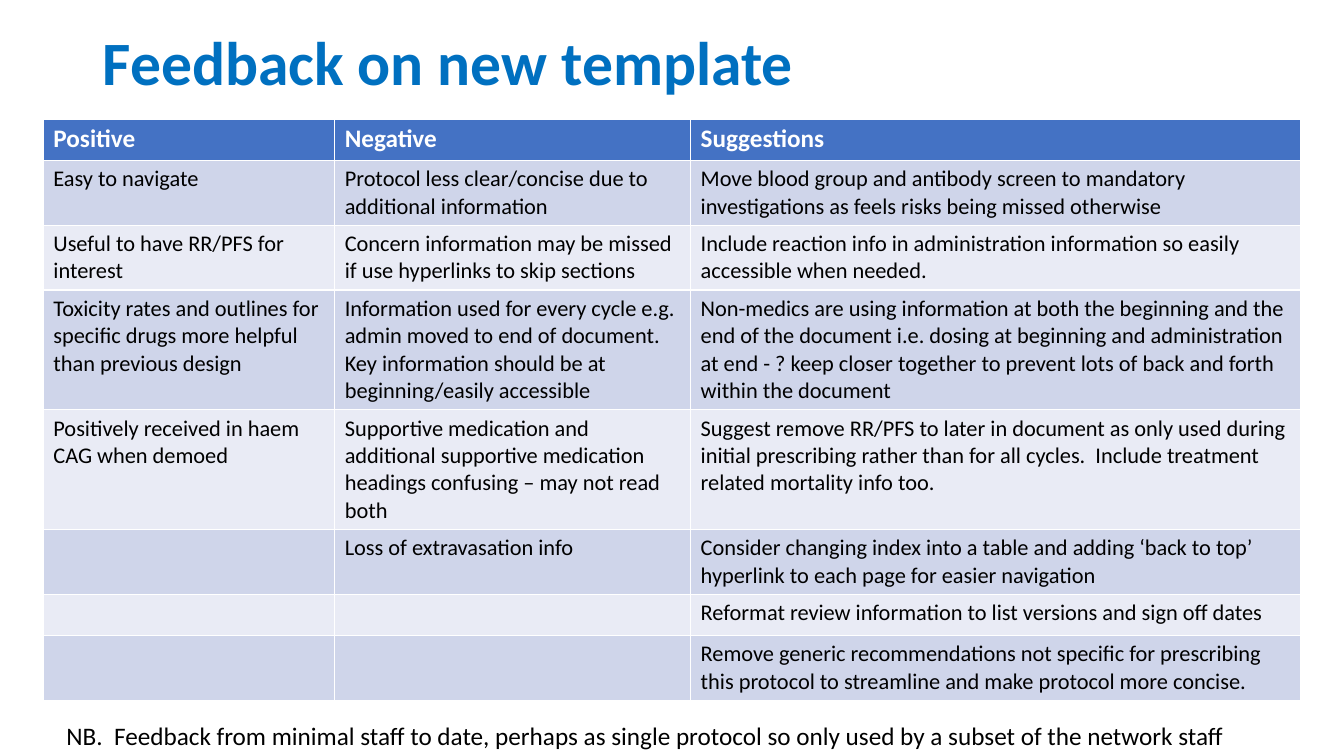
from pptx import Presentation
from pptx.dml.color import RGBColor as RGB
from pptx.enum.text import MSO_ANCHOR as Anchor, PP_ALIGN as Align
from pptx.util import Inches, Pt

TITLE = "Feedback on new template"
NOTE = ("NB.  Feedback from minimal staff to date, perhaps as single protocol "
        "so only used by a subset of the network staff")
ROWS = [
    ("Positive", "Negative", "Suggestions"),
    ("Easy to navigate",
     "Protocol less clear/concise due to additional information",
     "Move blood group and antibody screen to mandatory investigations "
     "as feels risks being missed otherwise"),
    ("Useful to have RR/PFS for interest",
     "Concern information may be missed if use hyperlinks to skip sections",
     "Include reaction info in administration information so easily "
     "accessible when needed."),
    ("Toxicity rates and outlines for specific drugs more helpful than "
     "previous design",
     "Information used for every cycle e.g. admin moved to end of document.  "
     "Key information should be at beginning/easily accessible",
     "Non-medics are using information at both the beginning and the end of "
     "the document i.e. dosing at beginning and administration at end - ? "
     "keep closer together to prevent lots of back and forth  within the "
     "document"),
    ("Positively received in haem CAG when demoed",
     "Supportive medication and additional supportive medication headings "
     "confusing – may not read both",
     "Suggest remove RR/PFS to later in document as only used during initial "
     "prescribing rather than for all cycles.  Include treatment related "
     "mortality info too."),
    ("", "Loss of extravasation info",
     "Consider changing index into a table and adding ‘back to top’ "
     "hyperlink to each page for easier navigation"),
    ("", "",
     "Reformat review information to list versions and sign off dates"),
    ("", "",
     "Remove generic recommendations not specific for prescribing this "
     "protocol to streamline and make protocol more concise."),
]
COLS = (2.89, 3.53, 6.05)
ROW = 0.41
HEX = {"title": "0070C0", "head": "4472C4", "odd": "CFD5EA",
       "even": "E9EBF5", "white": "FFFFFF", "black": "000000"}


def style(para, size, color, bold=False):
    font = para.font
    font.name, font.size, font.bold = "Calibri", Pt(size), bold
    font.color.rgb = RGB.from_string(HEX[color])


def box(*sizes):
    return [Inches(size) for size in sizes]


deck = Presentation()
deck.slide_width, deck.slide_height = box(13.33, 7.5)
slide = deck.slides.add_slide(deck.slide_layouts[5])

title = slide.shapes.title
title.left, title.top, title.width, title.height = box(0.92, 0.24, 11.5, 0.82)
title.text_frame.text = TITLE
title.text_frame.vertical_anchor = Anchor.MIDDLE
para = title.text_frame.paragraphs[0]
para.alignment, para.line_spacing = Align.LEFT, 0.9
style(para, 44, "title", True)

table = slide.shapes.add_table(
    len(ROWS), len(COLS), *box(0.43, 1.18, sum(COLS), ROW * len(ROWS))).table
for col, width in zip(table.columns, COLS):
    col.width = Inches(width)
for r, row in enumerate(ROWS):
    table.rows[r].height = Inches(ROW)
    tone = "head" if r == 0 else "odd" if r % 2 else "even"
    look = (18, "white", True) if r == 0 else (16, "black")
    for c, text in enumerate(row):
        cell = table.cell(r, c)
        cell.text = text
        cell.fill.solid()
        cell.fill.fore_color.rgb = RGB.from_string(HEX[tone])
        style(cell.text_frame.paragraphs[0], *look)

note = slide.shapes.add_textbox(*box(0.56, 7.1, 11.95, 0.4)).text_frame
note.word_wrap = True
note.text = NOTE
style(note.paragraphs[0], 18, "black")

deck.save("out.pptx")
